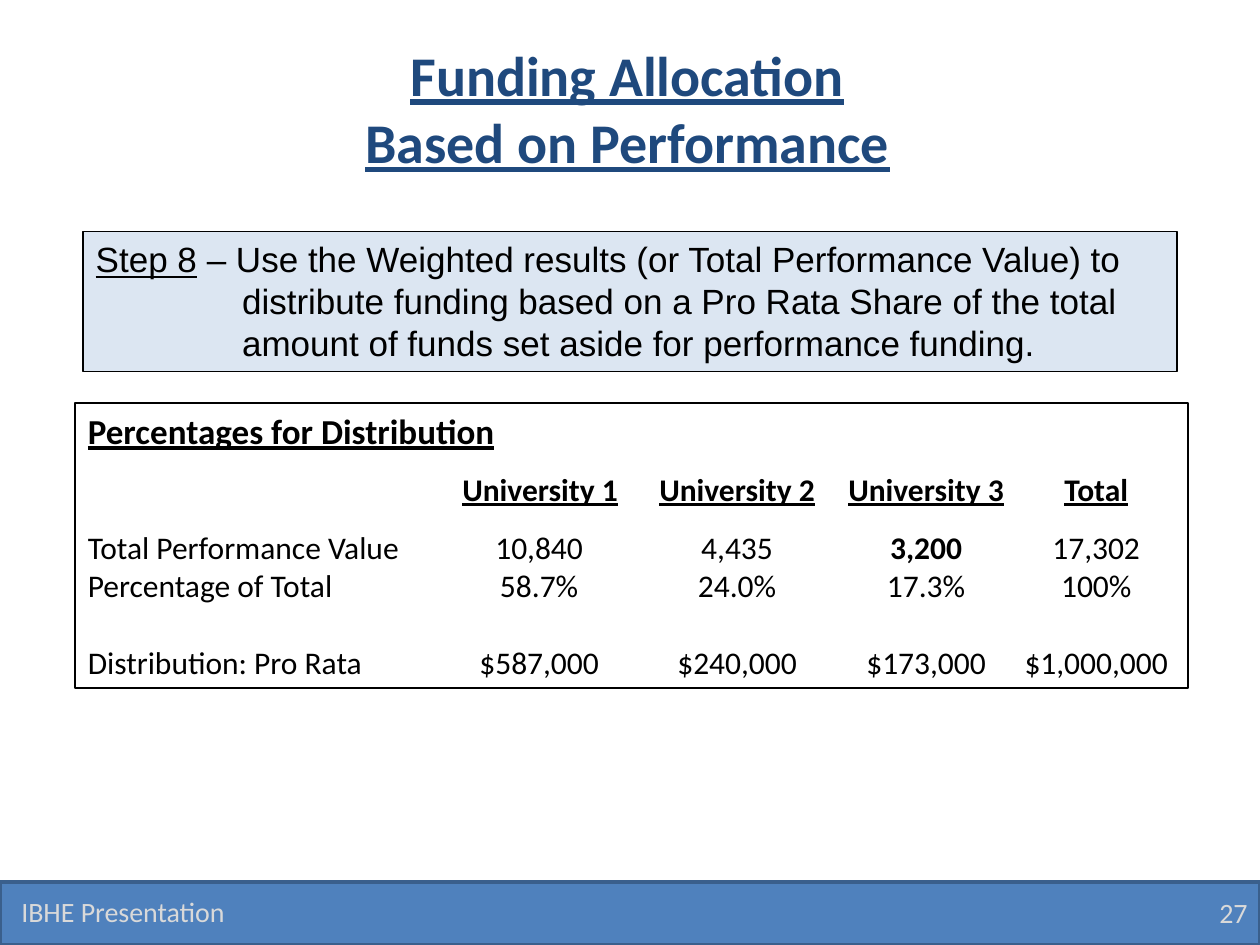
from typing import NamedTuple

from pptx import Presentation, util as u
from pptx.dml.color import RGBColor
from pptx.enum import shapes, text
from pptx.oxml.ns import qn

HUES = {"ink": "000000", "title": "1F497D", "pale": "DCE6F2",
        "bar": "4F81BD", "edge": "3A5F8C", "foot": "D9D9D9"}
COLS = (10.87, 14.86, 18.67, 22.1)  # column centres on the slide, cm
INSET = 0.25


class Area(NamedTuple):
    left: float
    top: float
    width: float
    height: float


class Bit(NamedTuple):
    words: str
    bold: bool | None = None
    line: bool | None = None


class Row(NamedTuple):
    bits: list[Bit]
    gap: float = 0


def hue(name: str) -> RGBColor:
    return RGBColor.from_string(HUES[name])


def add_rect(slide, area: Area, fill: str | None, edge: str, weight: float):
    rect = slide.shapes.add_shape(shapes.MSO_SHAPE.RECTANGLE, *map(u.Cm, area))
    rect.shadow.inherit = False
    if fill:
        rect.fill.solid()
        rect.fill.fore_color.rgb = hue(fill)
    else:
        rect.fill.background()
    rect.line.color.rgb = hue(edge)
    rect.line.width = u.Pt(weight)
    return rect


def add_box(slide, area: Area):
    return slide.shapes.add_textbox(*map(u.Cm, area))


def add_tabs(para, left: float) -> None:
    """Centre a tab stop on each column, measured from the text's left edge."""
    props = para._p.get_or_add_pPr()
    stops = props.makeelement(qn("a:tabLst"), {})
    for col in COLS:
        if col > left:
            spot = {"pos": str(u.Cm(col - left)), "algn": "ctr"}
            stops.append(stops.makeelement(qn("a:tab"), spot))
    props.append(stops)


def write(shape, rows: list[Row], size: float, color: str = "ink",
          face: str = "Calibri", align=text.PP_ALIGN.LEFT,
          anchor=text.MSO_ANCHOR.TOP, tabs: bool = False) -> None:
    frame = shape.text_frame
    frame.word_wrap = True
    frame.vertical_anchor = anchor
    for i, row in enumerate(rows):
        para = frame.paragraphs[0] if i == 0 else frame.add_paragraph()
        if tabs:
            add_tabs(para, shape.left.cm + INSET)
        para.alignment = align
        if row.gap:
            para.space_before = u.Pt(row.gap)
        para.font.size = u.Pt(size)
        para.font.name = face
        para.font.color.rgb = hue(color)
        for bit in row.bits:
            run = para.add_run()
            run.text = bit.words
            run.font.bold = bit.bold
            run.font.underline = bit.line


def add_foot(slide) -> None:
    add_rect(slide, Area(0, 17.78, 25.4, 1.27), "bar", "edge", 2)
    marks = (("IBHE Presentation", Area(0.18, 17.86, 8.05, 1.02), text.PP_ALIGN.LEFT),
             ("27", Area(24.16, 17.88, 1.24, 1.02), text.PP_ALIGN.RIGHT))
    for words, area, align in marks:
        write(add_box(slide, area), [Row([Bit(words)])], 16, "foot",
              align=align, anchor=text.MSO_ANCHOR.MIDDLE)


def add_title(slide) -> None:
    box = add_box(slide, Area(1.22, 0.58, 22.86, 3.18))
    write(box, [Row([])], 32, "title", align=text.PP_ALIGN.CENTER,
          anchor=text.MSO_ANCHOR.MIDDLE)
    para = box.text_frame.paragraphs[0]
    para.text = "Funding Allocation\vBased on Performance"
    for run in para.runs:
        run.font.bold = run.font.underline = True


def add_step(slide) -> None:
    rect = add_rect(slide, Area(1.68, 4.67, 22.05, 2.82), "pale", "ink", 1)
    write(rect, [Row([
        Bit("Step 8", line=True),
        Bit(" – Use the Weighted results (or Total Performance Value) to "
            "distribute funding based on a Pro Rata Share of the total "
            "amount of funds set aside for performance funding."),
    ])], 20, face="Arial")
    props = rect.text_frame.paragraphs[0]._p.get_or_add_pPr()
    hang = u.Cm(2.95)
    props.set("marL", str(hang))
    props.set("indent", str(-hang))


def add_shares(slide) -> None:
    panel = add_rect(slide, Area(1.52, 8.13, 22.43, 5.74), None, "ink", 1)
    write(panel, [
        Row([Bit("Percentages for Distribution", True, True)]),
        Row([Bit("Total Performance Value\t10,840\t4,435\t"),
             Bit("3,200", True), Bit("\t17,302")], 44),
        Row([Bit("Percentage of Total\t58.7%\t24.0%\t17.3%\t100%")]),
        Row([Bit("Distribution: Pro Rata\t$587,000\t$240,000\t$173,000\t$1,000,000")], 22),
    ], 18, tabs=True)
    panel.text_frame.paragraphs[0].font.size = u.Pt(20)

    heads = []
    for name in ("University 1", "University 2", "University 3", "Total"):
        heads += [Bit("\t"), Bit(name, True, True)]
    write(add_box(slide, Area(9.07, 9.35, 15.19, 1.02)), [Row(heads)], 18, tabs=True)


def main() -> None:
    deck = Presentation()
    deck.slide_width, deck.slide_height = u.Cm(25.4), u.Cm(19.05)
    slide = deck.slides.add_slide(deck.slide_layouts[6])
    add_foot(slide)
    add_shares(slide)
    add_title(slide)
    add_step(slide)
    deck.save("out.pptx")


if __name__ == "__main__":
    main()
